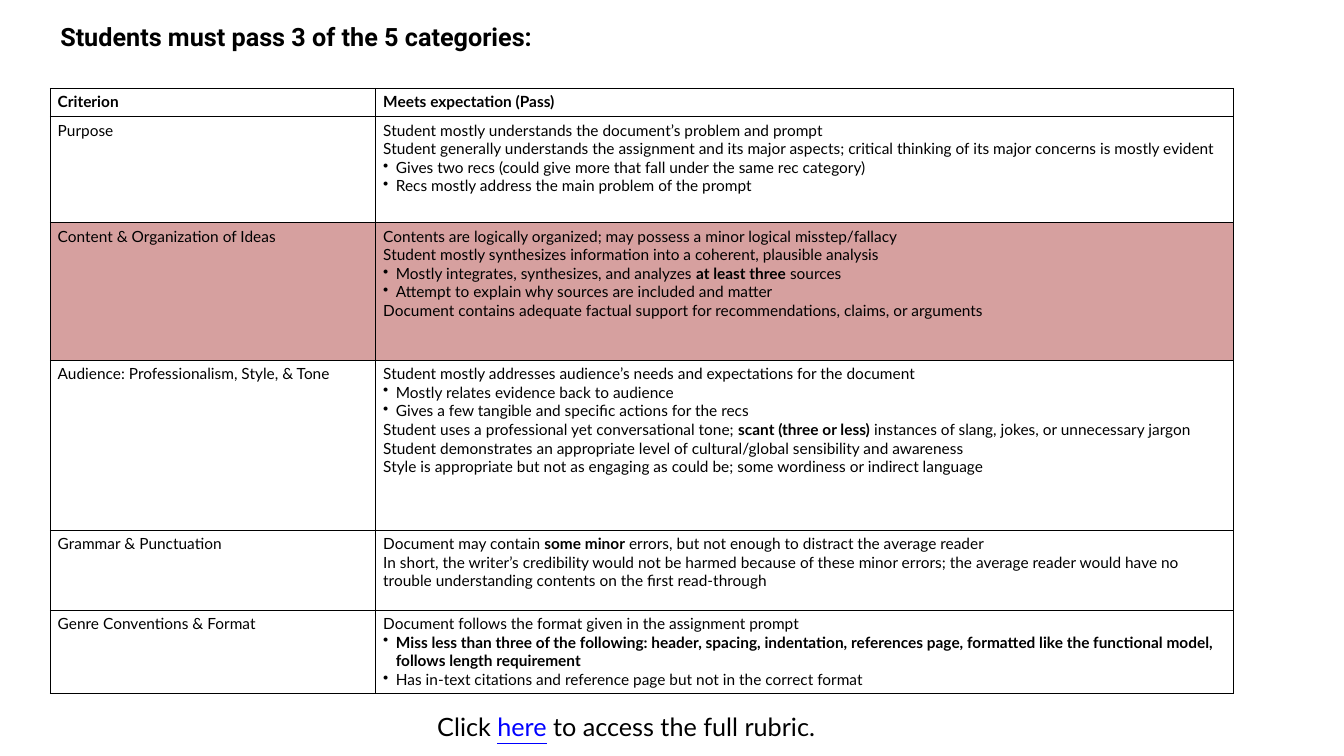
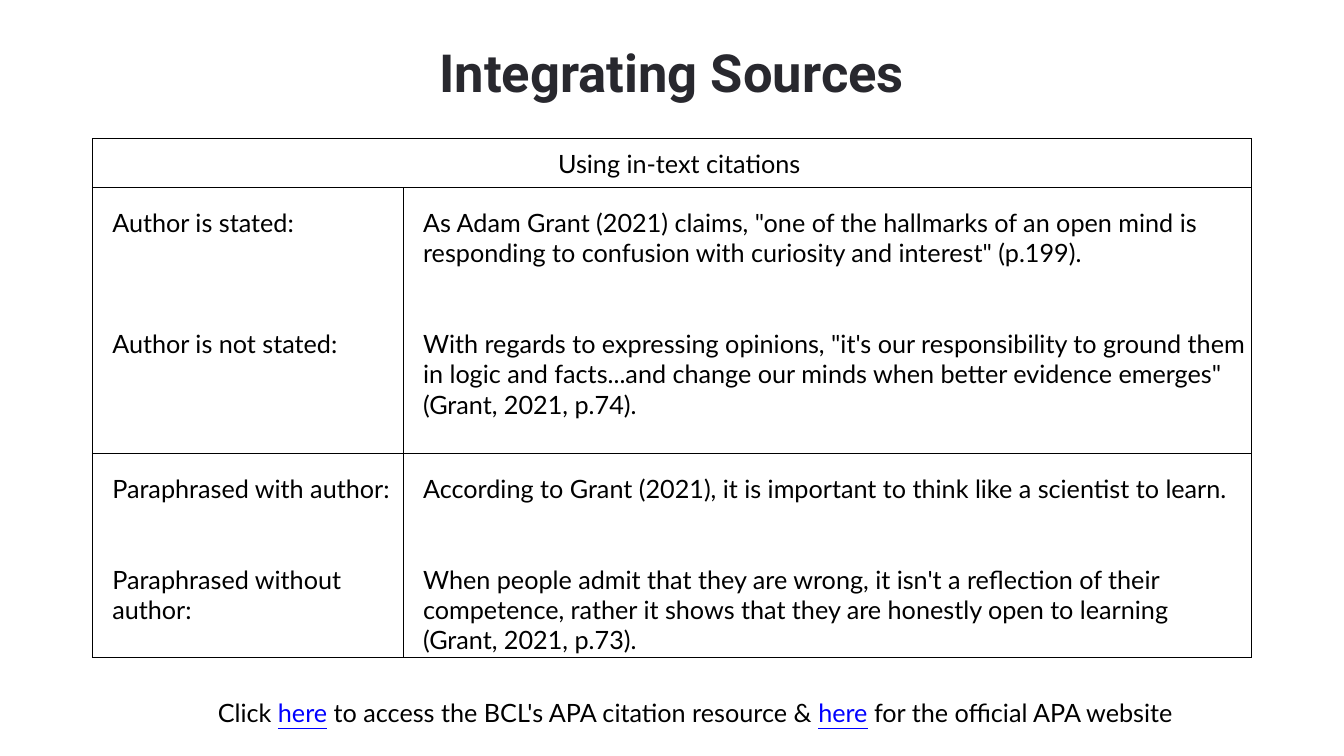
"""Build two slides: a pass rubric and a guide to in-text citations."""
from lxml import etree
from pptx import Presentation
from pptx.dml.color import RGBColor
from pptx.enum.text import MSO_AUTO_SIZE, PP_ALIGN
from pptx.oxml.ns import qn
from pptx.util import Pt

PX = 9525
CENTER = PP_ALIGN.CENTER
FIT_SHAPE = MSO_AUTO_SIZE.SHAPE_TO_FIT_TEXT
COLORS = {"text": "000000", "title": "28282E", "link": "0000FF", "highlight": "D6A09F"}
TITLE_FONT = "Roboto"
BODY_FONT = "Lato"
BULLET_INDENT = 12
LINE_PT = 21.6


def write(paragraph, text, size, font=BODY_FONT, color="text", links=False):
    """Add runs to a paragraph; parts between asterisks are bold, or links."""
    for position, part in enumerate(text.split("*")):
        if not part:
            continue
        marked = position % 2 == 1
        run = paragraph.add_run()
        run.text = part
        run.font.size = Pt(size)
        run.font.name = font
        run.font.bold = marked and not links
        run.font.underline = marked and links
        shade = "link" if marked and links else color
        run.font.color.rgb = RGBColor.from_string(COLORS[shade])


def ruled_table(slide, left, top, widths, heights, insets):
    """Add an unfilled table with thin black rules round every cell."""
    frame = slide.shapes.add_table(
        len(heights), len(widths), left * PX, top * PX, sum(widths) * PX, sum(heights) * PX
    )
    table = frame.table
    table.first_row = table.horz_banding = False
    for column, width in zip(table.columns, widths):
        column.width = width * PX
    for row, height in zip(table.rows, heights):
        row.height = height * PX
    for cell in table.iter_cells():
        cell.margin_left, cell.margin_top, cell.margin_right, cell.margin_bottom = [
            inset * PX for inset in insets
        ]
        cell.fill.background()
        properties = cell._tc.get_or_add_tcPr()
        for order, side in enumerate(("lnL", "lnR", "lnT", "lnB")):
            rule = etree.Element(qn(f"a:{side}"), w=str(Pt(0.75)))
            fill = etree.SubElement(rule, qn("a:solidFill"))
            etree.SubElement(fill, qn("a:srgbClr"), val=COLORS["text"])
            properties.insert(order, rule)
    return table


prs = Presentation()
prs.slide_width = 1280 * PX
prs.slide_height = 720 * PX
blank = prs.slide_layouts[6]
rubric_slide = prs.slides.add_slide(blank)
sources_slide = prs.slides.add_slide(blank)

RUBRIC = [
    ("*Criterion*", ["*Meets expectation (Pass)*"]),
    ("Purpose", [
        "Student mostly understands the document’s problem and prompt",
        "Student generally understands the assignment and its major aspects; "
        "critical thinking of its major concerns is mostly evident",
        "• Gives two recs (could give more that fall under the same rec category)",
        "• Recs mostly address the main problem of the prompt",
    ]),
    ("Content & Organization of Ideas", [
        "Contents are logically organized; may possess a minor logical misstep/fallacy",
        "Student mostly synthesizes information into a coherent, plausible analysis",
        "• Mostly integrates, synthesizes, and analyzes *at least three* sources",
        "• Attempt to explain why sources are included and matter",
        "Document contains adequate factual support for recommendations, claims, or arguments",
    ]),
    ("Audience: Professionalism, Style, & Tone", [
        "Student mostly addresses audience’s needs and expectations for the document",
        "• Mostly relates evidence back to audience",
        "• Gives a few tangible and specific actions for the recs",
        "Student uses a professional yet conversational tone; *scant (three or less)* "
        "instances of slang, jokes, or unnecessary jargon",
        "Student demonstrates an appropriate level of cultural/global sensibility and awareness",
        "Style is appropriate but not as engaging as could be; some wordiness or indirect language",
    ]),
    ("Grammar & Punctuation", [
        "Document may contain *some minor* errors, but not enough to distract the average reader",
        "In short, the writer’s credibility would not be harmed because of these minor errors; "
        "the average reader would have no trouble understanding contents on the first read-through",
    ]),
    ("Genre Conventions & Format", [
        "Document follows the format given in the assignment prompt",
        "• *Miss less than three of the following: header, spacing, indentation, references page, "
        "formatted like the functional model, follows length requirement*",
        "• Has in-text citations and reference page but not in the correct format",
    ]),
]
HIGHLIGHTED = "Content & Organization of Ideas"

rubric = ruled_table(rubric_slide, 48, 84, [310, 817], [27, 101, 131, 162, 76, 77], [7, 4, 7, 4])
for row, (criterion, expectations) in enumerate(RUBRIC):
    for column, lines in enumerate(([criterion], expectations)):
        cell = rubric.cell(row, column)
        if criterion == HIGHLIGHTED:
            cell.fill.solid()
            cell.fill.fore_color.rgb = RGBColor.from_string(COLORS["highlight"])
        for index, line in enumerate(lines):
            body = cell.text_frame
            paragraph = body.add_paragraph() if index else body.paragraphs[0]
            if line.startswith("• "):
                properties = paragraph._p.get_or_add_pPr()
                properties.set("marL", str(BULLET_INDENT * PX))
                properties.set("indent", str(-BULLET_INDENT * PX))
                etree.SubElement(properties, qn("a:buChar"), char="•")
            write(paragraph, line.removeprefix("• "), 11)

CITATIONS = [
    [
        (["Author is stated:", "Author is not stated:"], 3),
        ([
            'As Adam Grant (2021) claims, "one of the hallmarks of an open mind is '
            'responding to confusion with curiosity and interest" (p.199).',
            'With regards to expressing opinions, "it\'s our responsibility to ground them '
            'in logic and facts...and change our minds when better evidence emerges" '
            "(Grant, 2021, p.74).",
        ], 2),
    ],
    [
        (["Paraphrased with author:", "Paraphrased without author:"], 2),
        ([
            "According to Grant (2021), it is important to think like a scientist to learn.",
            "When people admit that they are wrong, it isn't a reflection of their competence, "
            "rather it shows that they are honestly open to learning (Grant, 2021, p.73).",
        ], 2),
    ],
]

heading_box = sources_slide.shapes.add_textbox(0, 41 * PX, 1280 * PX, 56 * PX)
heading = heading_box.text_frame
heading.word_wrap = True
heading.margin_left = heading.margin_top = heading.margin_right = heading.margin_bottom = 0
heading.paragraphs[0].alignment = CENTER
heading.paragraphs[0].line_spacing = Pt(42.6)
write(heading.paragraphs[0], "*Integrating Sources*", 37.5, TITLE_FONT, "title")

citations = ruled_table(sources_slide, 88, 132, [296, 808], [47, 253, 194], [19, 19, 5, 2])
citations.cell(0, 0).merge(citations.cell(0, 1))
caption = citations.cell(0, 0).text_frame.paragraphs[0]
caption.alignment = CENTER
caption.line_spacing = Pt(14.2)
write(caption, "Using in-text citations", 18)
for row, cases in enumerate(CITATIONS, start=1):
    for column, (entries, gap_lines) in enumerate(cases):
        body = citations.cell(row, column).text_frame
        for index, entry in enumerate(entries):
            paragraph = body.add_paragraph() if index else body.paragraphs[0]
            if index:
                paragraph.space_before = Pt(gap_lines * LINE_PT)
            write(paragraph, entry, 18)

SINGLE_LINES = [
    (rubric_slide, 48, 16, 498, "*Students must pass 3 of the 5 categories:*", TITLE_FONT, False),
    (rubric_slide, 407, 673, 384, "Click *here* to access the full rubric.", BODY_FONT, True),
    (sources_slide, 198, 659, 950,
     "Click *here* to access the BCL's APA citation resource & *here* for the official APA website",
     BODY_FONT, True),
]
for slide, left, top, width, text, font, links in SINGLE_LINES:
    line_box = slide.shapes.add_textbox(left * PX, top * PX, width * PX, 38 * PX)
    line_box.text_frame.word_wrap = False
    line_box.text_frame.auto_size = FIT_SHAPE
    write(line_box.text_frame.paragraphs[0], text, 18, font, links=links)

prs.save("out.pptx")
